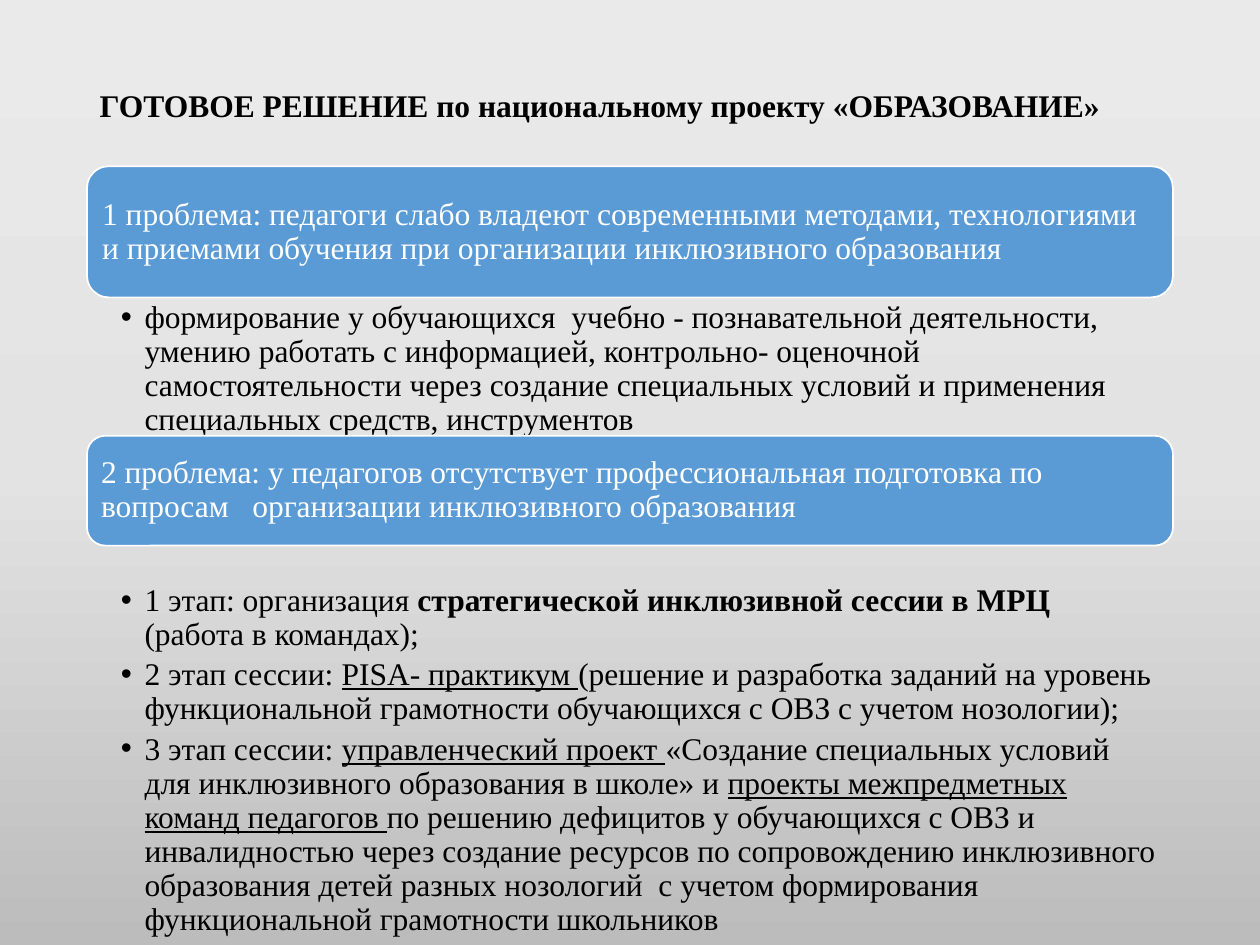
import copy
from dataclasses import dataclass

import pptx
import pptx.dml.color
import pptx.enum.shapes
import pptx.enum.text
import pptx.oxml
import pptx.oxml.ns
import pptx.util

Pt = pptx.util.Pt
RGB = pptx.dml.color.RGBColor.from_string
ANCHOR = pptx.enum.text.MSO_ANCHOR


@dataclass(frozen=True)
class Theme:
    font: str = "Times New Roman"
    size: int = 18
    text: str = "000000"
    light: str = "FFFFFF"
    accent: str = "5B9BD5"
    background: tuple = ((0, "EBEAEA"), (0.5, "E4E3E3"), (1, "BDBCBC"))
    line_spacing: float = 0.9


THEME = Theme()
LEFT, WIDTH = 49.7, 620.6

TITLE = "ГОТОВОЕ РЕШЕНИЕ по национальному проекту «ОБРАЗОВАНИЕ»"
PROBLEM_1 = ("1 проблема: педагоги слабо владеют современными методами, технологиями "
             "и приемами обучения при организации инклюзивного образования")
PROBLEM_2 = ("2 проблема: у педагогов отсутствует профессиональная подготовка по "
             "вопросам   организации инклюзивного образования")
GOALS = [
    [("формирование у обучающихся  учебно - познавательной деятельности, умению "
      "работать с информацией, контрольно- оценочной самостоятельности через создание "
      "специальных условий и применения специальных средств, инструментов", "")],
]
STAGES = [
    [("1 этап: организация ", ""),
     ("стратегической инклюзивной сессии в МРЦ ", "bold"),
     ("(работа в командах);", "")],
    [("2 этап сессии: ", ""),
     ("PISA- практикум ", "underline"),
     ("(решение и разработка заданий на уровень функциональной грамотности "
      "обучающихся с ОВЗ с учетом нозологии);", "")],
    [("3 этап сессии: ", ""),
     ("управленческий проект ", "underline"),
     ("«Создание специальных условий для инклюзивного образования в школе» и ", ""),
     ("проекты межпредметных команд педагогов ", "underline"),
     ("по решению дефицитов у обучающихся с ОВЗ и инвалидностью через создание "
      "ресурсов по сопровождению инклюзивного образования детей разных нозологий  "
      "с учетом формирования функциональной грамотности школьников", "")],
]


def set_background(s):
    fill = s.background.fill
    fill.gradient()
    fill.gradient_angle = 270
    stop_list = s._element.xpath(".//a:gsLst")[0]
    stop_list.insert(1, copy.deepcopy(stop_list[0]))
    for stop, (position, color) in zip(fill.gradient_stops, THEME.background):
        stop.position = position
        stop.color.rgb = RGB(color)


def place(sp, top, height):
    sp.left, sp.top, sp.width, sp.height = Pt(LEFT), Pt(top), Pt(WIDTH), Pt(height)


def format_frame(tf, anchor, left, top, right, bottom):
    tf.word_wrap = True
    tf.auto_size = pptx.enum.text.MSO_AUTO_SIZE.NONE
    tf.vertical_anchor = anchor
    tf.margin_left, tf.margin_top = Pt(left), Pt(top)
    tf.margin_right, tf.margin_bottom = Pt(right), Pt(bottom)


def format_paragraph(p, color, space_after=0):
    p.alignment = pptx.enum.text.PP_ALIGN.LEFT
    p.line_spacing = THEME.line_spacing
    p.space_before = Pt(0)
    p.space_after = Pt(space_after)
    for r in p.runs:
        r.font.name = THEME.font
        r.font.size = Pt(THEME.size)
        r.font.color.rgb = RGB(color)


def set_title(s, text, top, height):
    sp = s.shapes.title
    place(sp, top, height)
    tf = sp.text_frame
    format_frame(tf, ANCHOR.MIDDLE, 7.2, 3.6, 7.2, 3.6)
    tf.text = text
    p = tf.paragraphs[0]
    format_paragraph(p, THEME.text)
    p.runs[0].font.bold = True


def add_problem(s, text, top, height):
    sp = s.shapes.add_shape(pptx.enum.shapes.MSO_SHAPE.ROUNDED_RECTANGLE, 0, 0, 0, 0)
    place(sp, top, height)
    sp.shadow.inherit = False
    sp.fill.solid()
    sp.fill.fore_color.rgb = RGB(THEME.accent)
    sp.line.color.rgb = RGB(THEME.light)
    sp.line.width = Pt(1)
    tf = sp.text_frame
    format_frame(tf, ANCHOR.MIDDLE, 5, 5, 5, 5)
    tf.text = text
    format_paragraph(tf.paragraphs[0], THEME.light)


def add_bullet(p):
    pPr = p._p.get_or_add_pPr()
    pPr.set("marL", str(Pt(13.5)))
    pPr.set("indent", str(Pt(-13.5)))
    bullet = pptx.oxml.parse_xml(f'<a:buChar {pptx.oxml.ns.nsdecls("a")} char="•"/>')
    pPr.append(bullet)


def set_list(sp, items, top, height, inset_top):
    place(sp, top, height)
    tf = sp.text_frame
    format_frame(tf, ANCHOR.TOP, 19.4, inset_top, 9, 1.5)
    for i, parts in enumerate(items):
        p = tf.paragraphs[0] if i == 0 else tf.add_paragraph()
        add_bullet(p)
        for text, style in parts:
            r = p.add_run()
            r.text = text
            r.font.bold = style == "bold"
            r.font.underline = style == "underline"
        format_paragraph(p, THEME.text, 3.6)


def main():
    prs = pptx.Presentation()
    prs.slide_width, prs.slide_height = Pt(720), Pt(540)
    s = prs.slides.add_slide(prs.slide_layouts.get_by_name("Two Content"))
    set_background(s)
    set_title(s, TITLE, 28.8, 65.5)
    goals, stages = s.placeholders[1], s.placeholders[2]
    set_list(goals, GOALS, 170, 79, 2.2)
    set_list(stages, STAGES, 311.8, 219, 22)
    add_problem(s, PROBLEM_1, 95, 75)
    add_problem(s, PROBLEM_2, 249, 62.8)
    prs.save("out.pptx")


if __name__ == "__main__":
    main()
